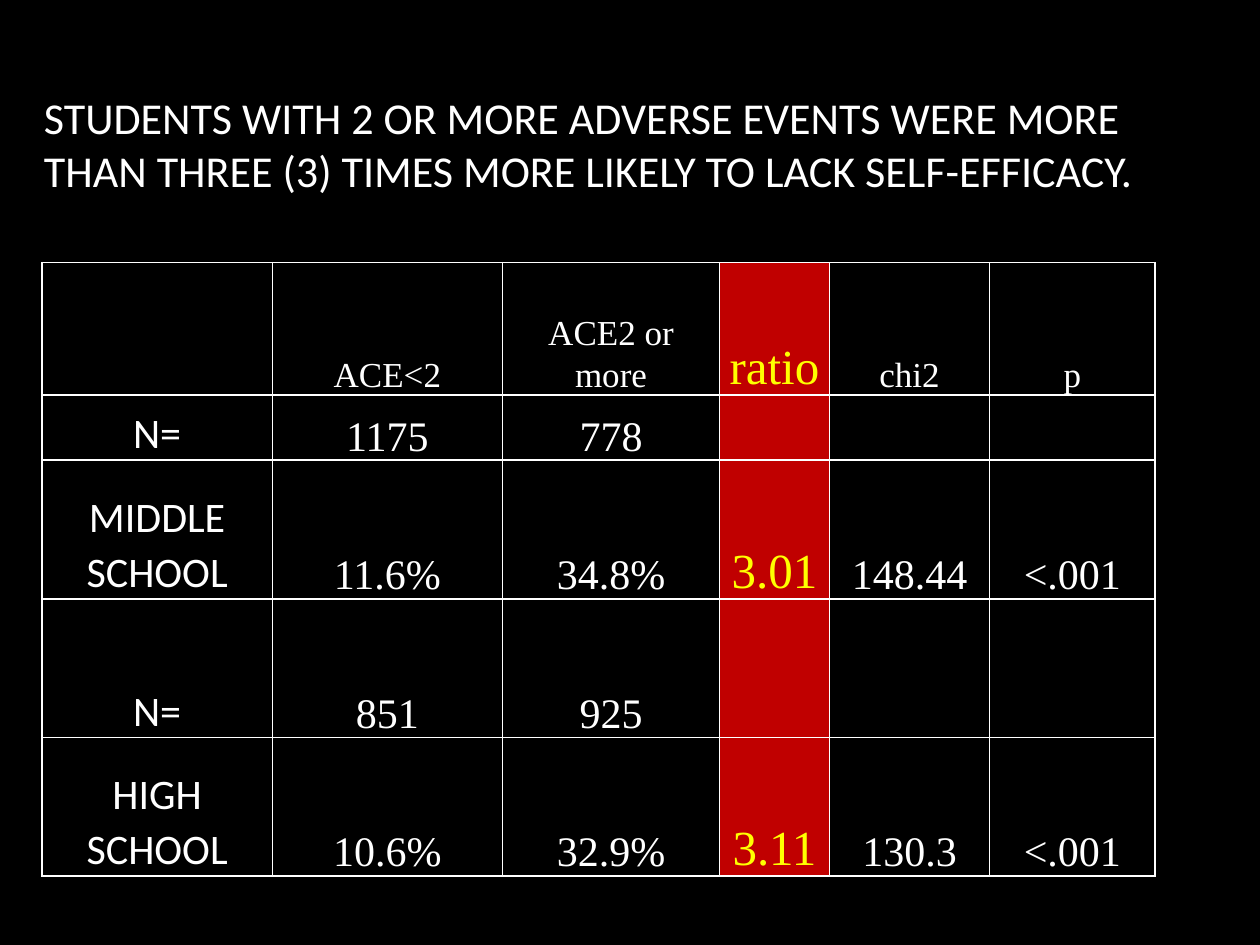
from dataclasses import dataclass

from lxml.etree import SubElement
from pptx import Presentation
from pptx.dml.color import RGBColor
from pptx.enum.text import MSO_ANCHOR, PP_ALIGN
from pptx.oxml.ns import qn
from pptx.util import Pt


@dataclass(frozen=True)
class Theme:
    background: str = "000000"
    text: str = "FFFFFF"
    accent: str = "FFFF00"
    highlight: str = "C00000"
    sans: str = "Calibri"
    serif: str = "Times New Roman"
    title_size: float = 25.2
    header_size: float = 20
    body_size: float = 24
    ratio_size: float = 28
    line_spacing: float = 1.07
    border: float = 1


@dataclass(frozen=True)
class TextStyle:
    font: str
    size: float
    color: str


THEME = Theme()
TITLE = TextStyle(THEME.sans, THEME.title_size, THEME.text)
HEADER = TextStyle(THEME.serif, THEME.header_size, THEME.text)
LABEL = TextStyle(THEME.sans, THEME.body_size, THEME.text)
VALUE = TextStyle(THEME.serif, THEME.body_size, THEME.text)
RATIO = TextStyle(THEME.serif, THEME.ratio_size, THEME.accent)

RATIO_COL = 3
COL_WIDTHS = (131.6, 131.6, 124, 62.8, 91.6, 94.5)
ROW_HEIGHTS = (75.6, 37.4, 79.2, 79.2, 79.2)
ROWS = (
    ("", "ACE<2", "ACE2 or more", "ratio", "chi2", "p"),
    ("N=", "1175", "778", "", "", ""),
    ("MIDDLE SCHOOL", "11.6%", "34.8%", "3.01", "148.44", "<.001"),
    ("N=", "851", "925", "", "", ""),
    ("HIGH SCHOOL", "10.6%", "32.9%", "3.11", "130.3", "<.001"),
)


def style_paragraph(p, style: TextStyle) -> None:
    for r in p.runs:
        r.font.name = style.font
        r.font.size = Pt(style.size)
        r.font.color.rgb = RGBColor.from_string(style.color)


def cell_style(row: int, col: int) -> TextStyle:
    if col == RATIO_COL:
        return RATIO
    if row == 0:
        return HEADER
    return LABEL if col == 0 else VALUE


def add_borders(cell) -> None:
    tc_pr = cell._tc.get_or_add_tcPr()
    for index, side in enumerate(("a:lnL", "a:lnR", "a:lnT", "a:lnB")):
        ln = SubElement(tc_pr, qn(side), w=str(Pt(THEME.border)))
        fill = SubElement(ln, qn("a:solidFill"))
        SubElement(fill, qn("a:srgbClr"), val=THEME.text)
        # Borders come before the fill in the cell properties
        tc_pr.insert(index, ln)


def fill_cell(cell, text: str, row: int, col: int) -> None:
    cell.vertical_anchor = MSO_ANCHOR.BOTTOM
    cell.margin_left = cell.margin_right = Pt(4.6)
    cell.margin_top = cell.margin_bottom = Pt(0)
    if col == RATIO_COL:
        cell.fill.solid()
        cell.fill.fore_color.rgb = RGBColor.from_string(THEME.highlight)
    else:
        cell.fill.background()
    add_borders(cell)
    if text:
        cell.text_frame.text = text
        p = cell.text_frame.paragraphs[0]
        p.alignment = PP_ALIGN.CENTER
        p.line_spacing = THEME.line_spacing
        style_paragraph(p, cell_style(row, col))


def add_title(s, text: str) -> None:
    tf = s.shapes.add_textbox(Pt(18), Pt(48), Pt(666), Pt(96)).text_frame
    tf.word_wrap = True
    tf.vertical_anchor = MSO_ANCHOR.MIDDLE
    tf.margin_bottom = Pt(32)
    tf.text = text
    style_paragraph(tf.paragraphs[0], TITLE)


def add_results_table(s) -> None:
    table = s.shapes.add_table(
        len(ROWS), len(COL_WIDTHS), Pt(24), Pt(150),
        Pt(sum(COL_WIDTHS)), Pt(sum(ROW_HEIGHTS)),
    ).table
    table.first_row = table.horz_banding = False
    for column, width in zip(table.columns, COL_WIDTHS):
        column.width = Pt(width)
    for table_row, height in zip(table.rows, ROW_HEIGHTS):
        table_row.height = Pt(height)
    for row, texts in enumerate(ROWS):
        for col, text in enumerate(texts):
            fill_cell(table.cell(row, col), text, row, col)


def main() -> None:
    prs = Presentation()
    prs.slide_width, prs.slide_height = Pt(720), Pt(540)
    s = prs.slides.add_slide(prs.slide_layouts[6])

    # Background
    s.background.fill.solid()
    s.background.fill.fore_color.rgb = RGBColor.from_string(THEME.background)

    # Title and table
    add_title(s, "STUDENTS WITH 2 OR MORE ADVERSE EVENTS WERE MORE THAN "
                 "THREE (3) TIMES MORE LIKELY TO LACK SELF-EFFICACY.")
    add_results_table(s)

    prs.save("out.pptx")


if __name__ == "__main__":
    main()
